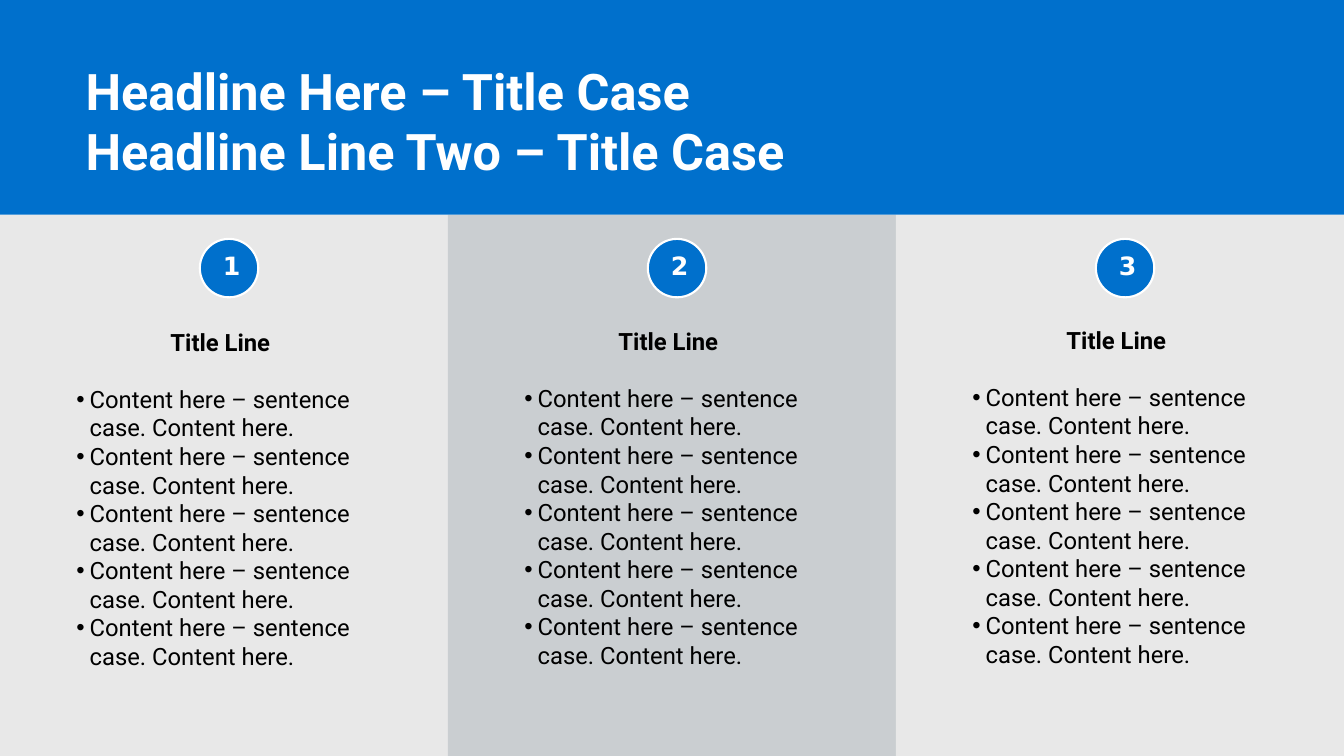
from lxml import etree
from pptx import Presentation
from pptx.dml.color import RGBColor
from pptx.enum.shapes import MSO_SHAPE
from pptx.enum.text import MSO_ANCHOR, PP_ALIGN
from pptx.oxml.ns import qn
from pptx.util import Inches, Pt

RECTANGLE, OVAL = MSO_SHAPE.RECTANGLE, MSO_SHAPE.OVAL
TOP, MIDDLE = MSO_ANCHOR.TOP, MSO_ANCHOR.MIDDLE
LEFT, CENTER = PP_ALIGN.LEFT, PP_ALIGN.CENTER

COLORS = {"blue": "0070CC", "light": "E8E8E8", "gray": "CACED1",
          "white": "FFFFFF", "black": "000000"}
BODY_FONT, NUMBER_FONT = "Roboto", "DejaVu Sans"

# Grid: a header band above three equal columns
WIDTH, HEIGHT = 13.33, 7.5
COLUMN = WIDTH / 3
HEADER = 2.13
BADGE = 0.58

HEADLINE = ["Headline Here – Title Case", "Headline Line Two – Title Case"]
COLUMN_FILLS = ["light", "gray", "light"]
COLUMN_TITLE = "Title Line "
BULLETS = ["Content here – sentence case. Content here."] * 5


def rgb(name):
    return RGBColor.from_string(COLORS[name])


def add_block(page, kind, left, top, width, height, fill, outline=None):
    block = page.shapes.add_shape(kind, Inches(left), Inches(top),
                                  Inches(width), Inches(height))
    block.shadow.inherit = False
    block.fill.solid()
    block.fill.fore_color.rgb = rgb(fill)
    if outline:
        block.line.color.rgb = rgb(outline)
        block.line.width = Pt(1.5)
    else:
        block.line.fill.background()


def add_box(page, left, top, width, height, anchor=TOP):
    box = page.shapes.add_textbox(Inches(left), Inches(top),
                                  Inches(width), Inches(height))
    frame = box.text_frame
    frame.word_wrap = True
    frame.vertical_anchor = anchor
    return frame


def add_line(frame, text, size, color, font=BODY_FONT, bold=True, align=LEFT):
    first = frame.paragraphs[0]
    para = frame.add_paragraph() if first.runs else first
    para.alignment = align
    span = para.add_run()
    span.text = text
    span.font.name = font
    span.font.size = Pt(size)
    span.font.bold = bold
    span.font.color.rgb = rgb(color)
    return para


def add_bullet(para):
    props = para._p.get_or_add_pPr()
    props.set("marL", str(Inches(0.25)))
    props.set("indent", str(Inches(-0.13)))
    etree.SubElement(props, qn("a:buFont"), typeface="Arial")
    etree.SubElement(props, qn("a:buChar"), char="•")


def add_column(page, index, fill):
    left = index * COLUMN
    add_block(page, RECTANGLE, left, HEADER, COLUMN, HEIGHT - HEADER, fill)

    # Numbered badge
    badge_left = left + (COLUMN - BADGE) / 2 + 0.05
    add_block(page, OVAL, badge_left, HEADER + 0.24, BADGE, BADGE, "blue", "white")
    number = add_box(page, badge_left + 0.13, HEADER + 0.3, 0.32, 0.4, MIDDLE)
    add_line(number, str(index + 1), 18, "white", NUMBER_FONT, align=CENTER)

    # Title and bullets
    body = add_box(page, left + 0.54, 3.2 - 0.01 * index, 3.35, 3.53)
    title = add_line(body, COLUMN_TITLE, 17, "black", align=CENTER)
    title.space_after = Pt(20.4)
    for text in BULLETS:
        add_bullet(add_line(body, text, 17, "black", bold=False))


def add_header(page):
    add_block(page, RECTANGLE, 0, 0, WIDTH, HEADER, "blue")
    headline = add_box(page, 0.75, 0.54, 11.82, 1.31, MIDDLE)
    for text in HEADLINE:
        add_line(headline, text, 36, "white")


def main():
    deck = Presentation()
    deck.slide_width, deck.slide_height = Inches(WIDTH), Inches(HEIGHT)
    page = deck.slides.add_slide(deck.slide_layouts[6])
    for index, fill in enumerate(COLUMN_FILLS):
        add_column(page, index, fill)
    add_header(page)
    deck.save("out.pptx")


if __name__ == "__main__":
    main()
